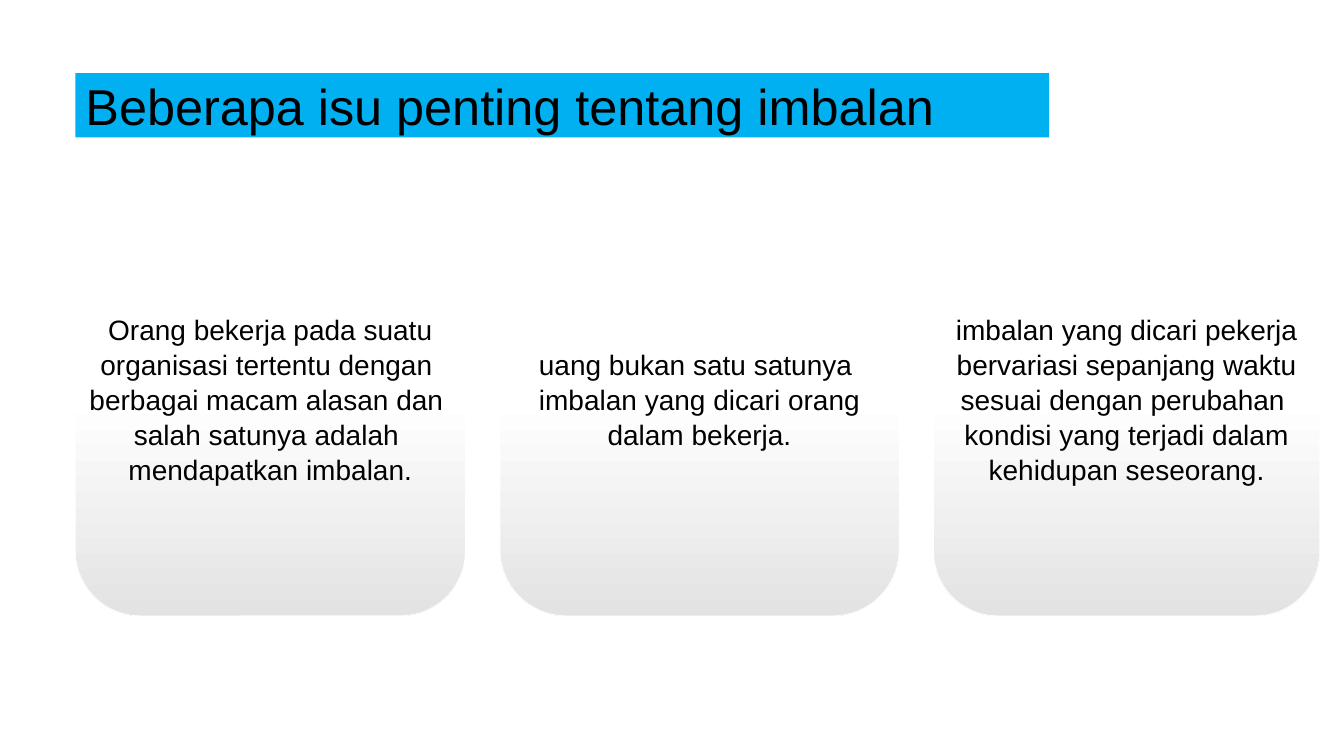
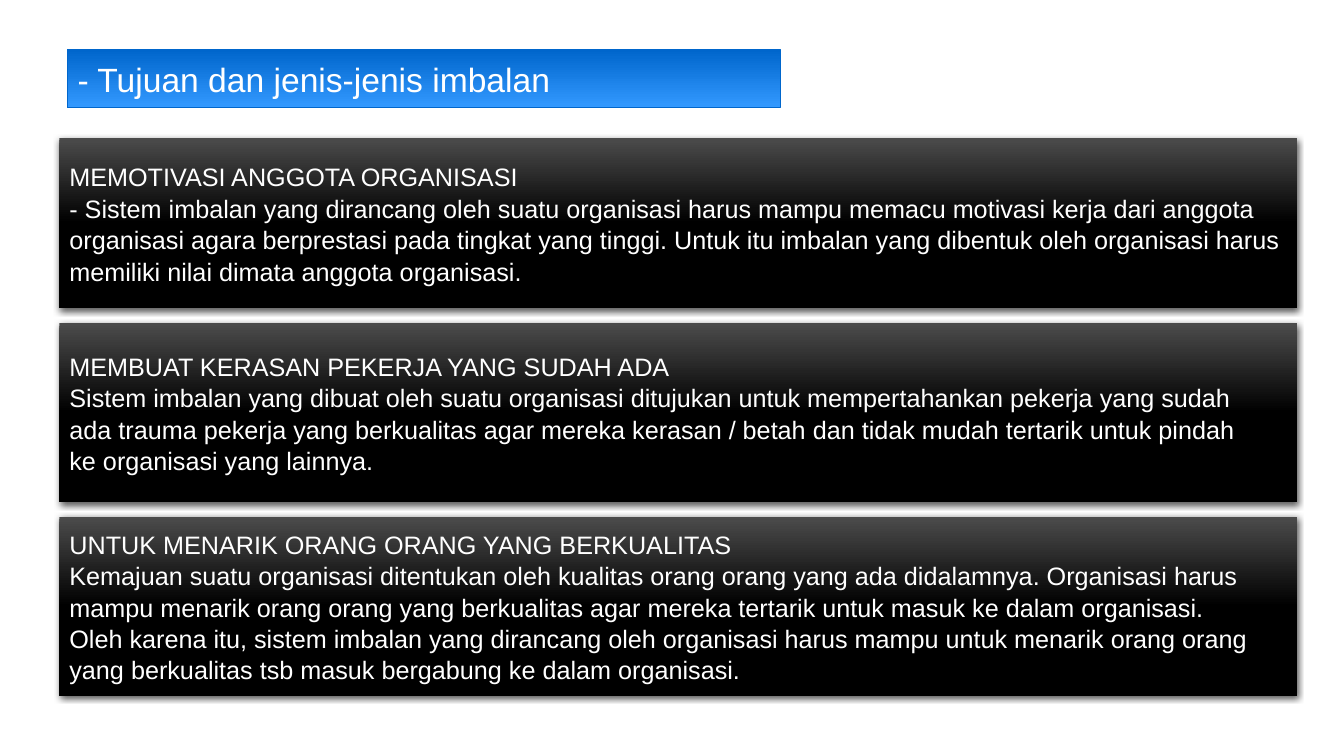
from lxml import etree
from pptx import Presentation
from pptx.dml.color import RGBColor
from pptx.enum import shapes, text
from pptx.oxml import ns
from pptx.util import Cm, Pt

FONT = "Arial"
BLACK, WHITE, SKY, BLUE = "000000", "FFFFFF", "00B0F0", "0066CC"
BLUE_FADE = [(0, BLUE), (100, "3399FF")]
GREY_FADE = [(0, WHITE), (50, WHITE), (100, "E3E3E3")]
DARK_FADE = [(0, "4B4B4B"), (50, BLACK), (100, BLACK)]
LINE_SPACING = 1.04

ISSUES_TITLE = "Beberapa isu penting tentang imbalan"
# width in cm, lines
ISSUES = [
    (9.83, ["Orang bekerja pada suatu",
            "organisasi tertentu dengan ",
            "berbagai macam alasan dan ",
            "salah satunya adalah ",
            "mendapatkan imbalan."]),
    (10.06, ["uang bukan satu satunya ",
             "imbalan yang dicari orang",
             "dalam bekerja."]),
    (9.73, ["imbalan yang dicari pekerja",
            "bervariasi sepanjang waktu",
            "sesuai dengan perubahan ",
            "kondisi yang terjadi dalam",
            "kehidupan seseorang."]),
]

GOALS_TITLE = "- Tujuan dan jenis-jenis imbalan"
# height in cm, lines
GOALS = [
    (4.29, ["MEMOTIVASI ANGGOTA ORGANISASI",
            "- Sistem imbalan yang dirancang oleh suatu organisasi harus mampu memacu motivasi kerja dari anggota",
            "organisasi agara berprestasi pada tingkat yang tinggi. Untuk itu imbalan yang dibentuk oleh organisasi harus",
            "memiliki nilai dimata anggota organisasi."]),
    (4.5, ["MEMBUAT KERASAN PEKERJA YANG SUDAH ADA",
           "Sistem imbalan yang dibuat oleh suatu organisasi ditujukan untuk mempertahankan pekerja yang sudah",
           "ada trauma pekerja yang berkualitas agar mereka kerasan / betah dan tidak mudah tertarik untuk pindah",
           "ke organisasi yang lainnya."]),
    (4.5, ["UNTUK MENARIK ORANG ORANG YANG BERKUALITAS",
           "Kemajuan suatu organisasi ditentukan oleh kualitas orang orang yang ada didalamnya. Organisasi harus",
           "mampu menarik orang orang yang berkualitas agar mereka tertarik untuk masuk ke dalam organisasi.",
           "Oleh karena itu, sistem imbalan yang dirancang oleh organisasi harus mampu untuk menarik orang orang",
           "yang berkualitas tsb masuk bergabung ke dalam organisasi."]),
]


def rgb(value):
    return RGBColor.from_string(value)


def add_node(parent, tag, **attributes):
    node = etree.SubElement(parent, ns.qn(tag))
    for key, value in attributes.items():
        node.set(key, str(value))
    return node


def fade(shape, stops):
    """Fill from top to bottom with (percent, colour) stops."""
    shape.fill.gradient()
    shape.fill.gradient_angle = 270
    stop_list = shape._element.spPr.find(".//" + ns.qn("a:gsLst"))
    for old in list(stop_list):
        stop_list.remove(old)
    for percent, colour in stops:
        stop = add_node(stop_list, "a:gs", pos=percent * 1000)
        add_node(stop, "a:srgbClr", val=colour)


def outline(shape, colour, width):
    shape.line.color.rgb = rgb(colour)
    shape.line.width = Pt(width)


def drop_shadow(shape):
    effects = shape._element.spPr.find(ns.qn("a:effectLst"))
    shadow = add_node(effects, "a:outerShdw", blurRad=Pt(4.5), dist=Pt(1.5),
                      dir=5400000, algn="ctr", rotWithShape=0)
    add_node(add_node(shadow, "a:srgbClr", val=BLACK), "a:alpha", val=63000)


def write(shape, lines, size, colour, align=text.PP_ALIGN.LEFT, wrap=True, spacing=1.0):
    frame = shape.text_frame
    frame.text = "\n".join(lines)
    frame_format = {"word_wrap": wrap, "auto_size": text.MSO_AUTO_SIZE.NONE,
                    "vertical_anchor": text.MSO_ANCHOR.MIDDLE}
    for key, value in frame_format.items():
        setattr(frame, key, value)
    for paragraph in frame.paragraphs:
        paragraph.alignment = align
        paragraph.line_spacing = spacing
        for run in paragraph.runs:
            run.font.name, run.font.size = FONT, Pt(size)
            run.font.color.rgb = rgb(colour)


def add_titled_slide(deck, title, box, size, colour, preset="rect"):
    """Add a slide and return it with its moved title placeholder."""
    slide = deck.slides.add_slide(deck.slide_layouts[5])
    heading = slide.shapes.title
    for side, length in zip(("left", "top", "width", "height"), box):
        setattr(heading, side, Cm(length))
    geometry = etree.Element(ns.qn("a:prstGeom"), prst=preset)
    add_node(geometry, "a:avLst")
    heading._element.spPr.find(ns.qn("a:xfrm")).addnext(geometry)
    write(heading, [title], size, colour)
    return slide, heading


def add_block(slide, kind, box, stops):
    block = slide.shapes.add_shape(kind, *map(Cm, box))
    block.shadow.inherit = False
    fade(block, stops)
    return block


def build_issues(deck):
    slide, heading = add_titled_slide(deck, ISSUES_TITLE, (1.9, 1.84, 24.54, 1.62), 36, BLACK)
    heading.fill.solid()
    heading.fill.fore_color.rgb = rgb(SKY)
    left, top, height, gap = 1.9, 4.57, 10.95, 0.87
    for width, lines in ISSUES:
        card = add_block(slide, shapes.MSO_SHAPE.ROUNDED_RECTANGLE,
                         (left, top, width, height), GREY_FADE)
        outline(card, WHITE, 0.5)
        write(card, lines, 20, BLACK, text.PP_ALIGN.CENTER, False, LINE_SPACING)
        left += width + gap


def build_goals(deck):
    slide, heading = add_titled_slide(deck, GOALS_TITLE, (1.7, 1.25, 17.96, 1.47),
                                      24, WHITE, "roundRect")
    fade(heading, BLUE_FADE)
    outline(heading, BLUE, 0.75)
    left, top, width, gap = 1.5, 3.48, 31.19, 0.38
    for height, lines in GOALS:
        panel = add_block(slide, shapes.MSO_SHAPE.RECTANGLE,
                          (left, top, width, height), DARK_FADE)
        panel.line.fill.background()
        drop_shadow(panel)
        write(panel, lines, 18, WHITE, spacing=LINE_SPACING)
        top += height + gap


def main():
    deck = Presentation()
    deck.slide_width, deck.slide_height = Cm(33.87), Cm(19.05)
    build_issues(deck)
    build_goals(deck)
    deck.save("out.pptx")


if __name__ == "__main__":
    main()
